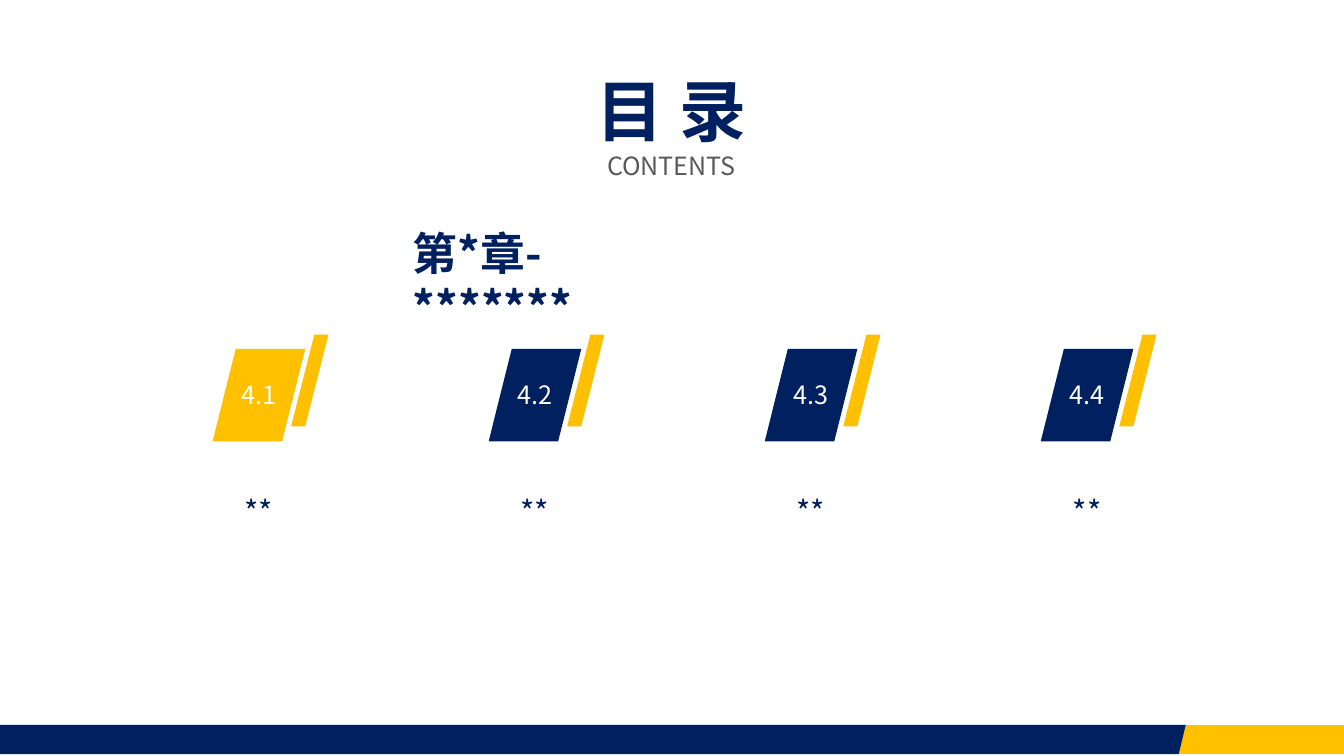
from dataclasses import dataclass

from pptx import Presentation
from pptx import util as u
from pptx.dml.color import RGBColor
from pptx.enum import shapes, text

COLUMNS, ROWS = 133.4, 75  # grid cells across and down the slide


@dataclass(frozen=True)
class Theme:
    font: str = "Noto Sans CJK SC"
    navy: str = "002060"
    gold: str = "FFC000"
    gray: str = "595959"
    white: str = "FFFFFF"
    title: float = 47.9
    subtitle: float = 17.9
    chapter: float = 32
    number: float = 18
    label: float = 21.9


class ContentsSlide:
    def __init__(self, deck, theme):
        self.theme = theme
        self.cell_width = deck.slide_width / COLUMNS
        self.cell_height = deck.slide_height / ROWS
        self.slide = deck.slides.add_slide(deck.slide_layouts[5])

    def point(self, column, row):
        return u.Emu(round(column * self.cell_width)), u.Emu(round(row * self.cell_height))

    def box(self, left, top, width, height):
        return *self.point(left, top), *self.point(width, height)

    def paint(self, shape, color):
        shape.fill.solid()
        shape.fill.fore_color.rgb = RGBColor.from_string(color)
        shape.line.fill.background()
        shape.shadow.inherit = False

    def style(self, paragraph, size, color, bold=False, align=text.PP_ALIGN.CENTER):
        paragraph.alignment = align
        font = paragraph.font
        font.name, font.size, font.bold = self.theme.font, u.Pt(size), bold
        font.color.rgb = RGBColor.from_string(color)

    def title(self, heading, subheading, *place):
        title = self.slide.shapes.title
        title.left, title.top, title.width, title.height = self.box(*place)
        frame = title.text_frame
        frame.text = f"{heading}\n{subheading}"
        frame.auto_size = text.MSO_AUTO_SIZE.SHAPE_TO_FIT_TEXT
        frame.vertical_anchor = text.MSO_ANCHOR.TOP
        self.style(frame.paragraphs[0], self.theme.title, self.theme.navy, bold=True)
        self.style(frame.paragraphs[1], self.theme.subtitle, self.theme.gray)

    def text(self, words, place, size, color, wrap=True, **look):
        frame = self.slide.shapes.add_textbox(*self.box(*place)).text_frame
        frame.word_wrap = wrap
        frame.auto_size = text.MSO_AUTO_SIZE.SHAPE_TO_FIT_TEXT
        frame.text = words
        self.style(frame.paragraphs[0], size, color, **look)

    def parallelogram(self, place, color):
        badge = self.slide.shapes.add_shape(shapes.MSO_SHAPE.PARALLELOGRAM, *self.box(*place))
        self.paint(badge, color)

    def outline(self, corners, color):
        start, *others = [self.point(*corner) for corner in corners]
        builder = self.slide.shapes.build_freeform(*start)
        builder.add_line_segments(others, close=True)
        self.paint(builder.convert_to_shape(), color)

    def section(self, number, label, center, color):
        """Draw a numbered badge with its slanted stripe and the label below."""
        theme = self.theme
        self.parallelogram((center - 4.6, 34.6, 9.2, 9.2), color)
        stripe = center + 3.2
        self.outline([(stripe + 2.3, 33.2), (stripe + 3.7, 33.2),
                      (stripe + 1.4, 42.3), (stripe, 42.3)], theme.gold)
        self.text(number, (center - 2.8, 37.1, 5.6, 4), theme.number, theme.white)
        self.text(label, (center - 9.2, 48.4, 18.4, 4.7), theme.label, theme.navy)

    def footer(self, top, bottom):
        self.outline([(8.8, top), (COLUMNS, top), (COLUMNS, bottom), (8.8, bottom)],
                     self.theme.gold)
        self.outline([(0, top), (117.7, top), (117, bottom), (0, bottom)], self.theme.navy)


def main():
    deck = Presentation()
    deck.slide_width, deck.slide_height = u.Inches(13.34), u.Inches(7.5)
    theme = Theme()
    contents = ContentsSlide(deck, theme)

    contents.footer(71.9, 74.8)
    contents.title("目 录", "CONTENTS", 51.6, 6.4, 30.1, 12.1)
    contents.text("第*章-*******", (40, 21.9, 30.5, 6.4), theme.chapter, theme.navy,
                  wrap=False, bold=True, align=text.PP_ALIGN.LEFT)

    first_center, pitch = 25.7, 27.4
    for index, number in enumerate(["4.1", "4.2", "4.3", "4.4"]):
        color = theme.navy if index else theme.gold
        contents.section(number, "**", first_center + index * pitch, color)

    deck.save("out.pptx")


if __name__ == "__main__":
    main()
